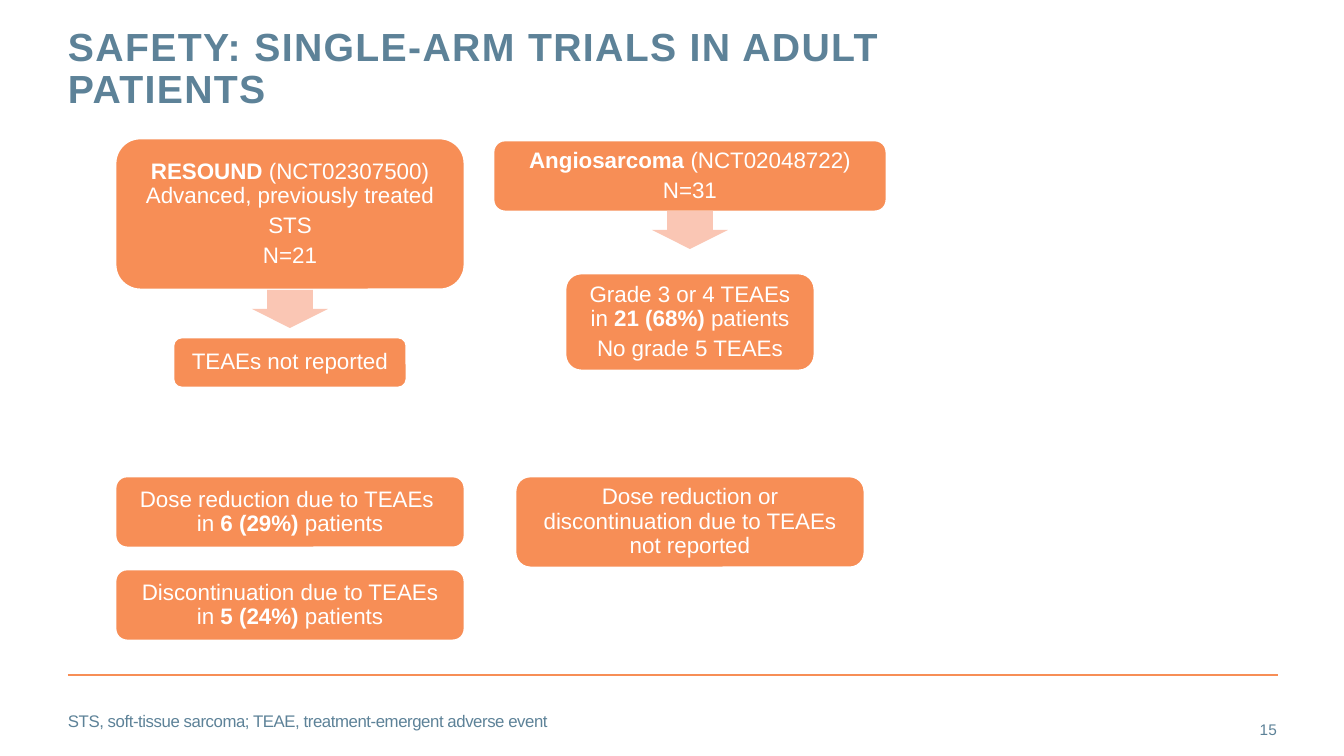
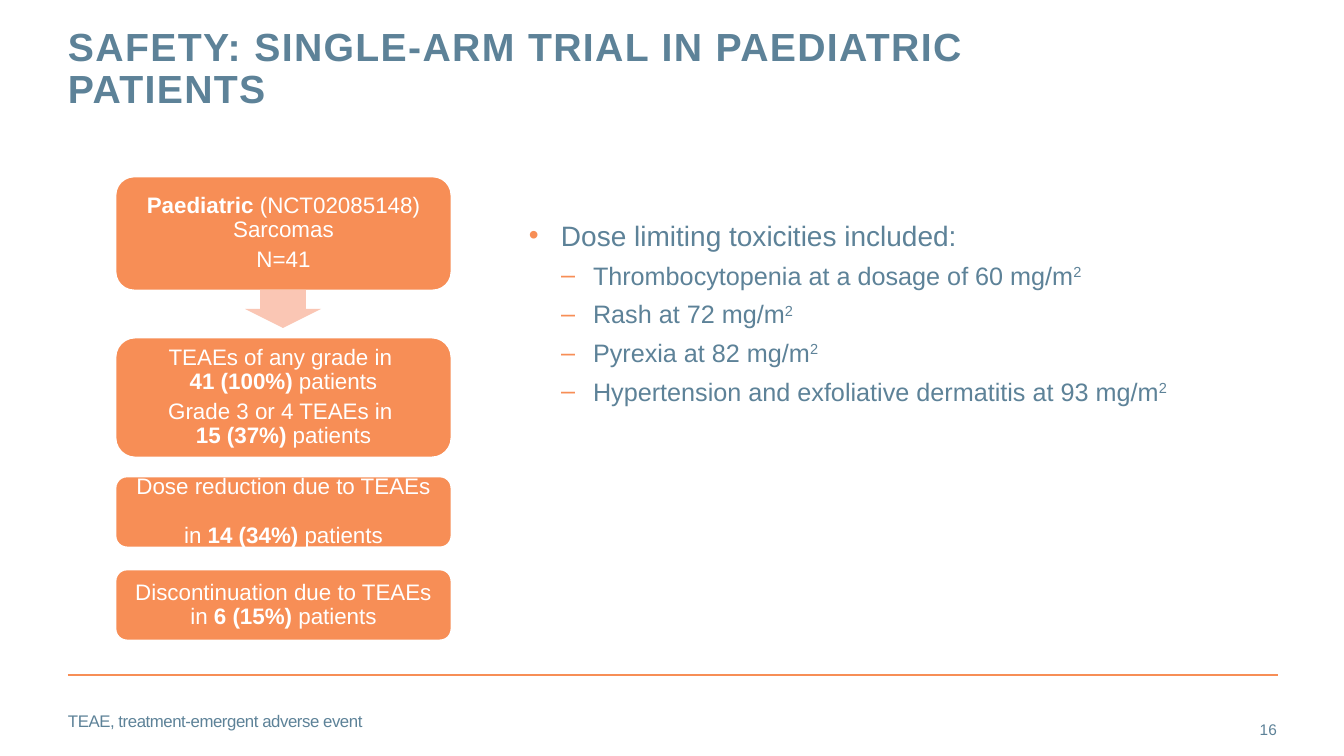
from copy import deepcopy

from lxml import etree
from pptx import Presentation
from pptx import util as u
from pptx.dml.color import RGBColor
from pptx.enum import shapes, text
from pptx.oxml.ns import qn

SCALE = 914400 / 100.8


def px(*nums):
    return [u.Emu(round(n * SCALE)) for n in nums]


def paint(hue):
    return RGBColor.from_string(hue)


class Deck:
    font = "Arial"
    slate, coral, blush, white = "5D8298", "F78E56", "FAC6B4", "FFFFFF"

    def __init__(self):
        self.prs = Presentation()
        self.prs.slide_width, self.prs.slide_height = px(1344, 756)
        self.slide = None

    def page(self, layout, title, note, num):
        self.slide = self.prs.slides.add_slide(self.prs.slide_layouts[layout])
        self.rule()
        head = self.slide.shapes.title
        para = self.frame(head, (68, 27, 964, 89)).paragraphs[0]
        para.alignment = text.PP_ALIGN.LEFT
        para.line_spacing = u.Pt(30)
        self.run(para, title, 28, self.slate, bold=True, track=100)
        self.label((68, 701, 1104, 40), note, 12, track=-30)
        self.label((1190, 709, 87, 40), num, 11, text.PP_ALIGN.RIGHT)

    def frame(self, shape, area, inset=0, anchor=text.MSO_ANCHOR.TOP):
        shape.left, shape.top, shape.width, shape.height = px(*area)
        body = shape.text_frame
        body.word_wrap = True
        body.auto_size = text.MSO_AUTO_SIZE.NONE
        body.vertical_anchor = anchor
        body.margin_left, body.margin_top, body.margin_right, body.margin_bottom = px(*[inset] * 4)
        return body

    def run(self, para, words, size, hue, bold=False, track=0, base=0):
        for i, line in enumerate(words.split("\n")):
            if i:
                para.add_line_break()
                para._p[-1].append(deepcopy(para.runs[-1]._r.rPr))
            if not line:
                continue
            run = para.add_run()
            run.text = line
            font = run.font
            font.name, font.size, font.bold = self.font, u.Pt(size), bold
            font.color.rgb = paint(hue)
            for key, val in (("spc", track), ("baseline", base)):
                if val:
                    run._r.get_or_add_rPr().set(key, str(val))

    def rule(self):
        line = self.slide.shapes.add_connector(shapes.MSO_CONNECTOR.STRAIGHT, *px(68, 675, 1278, 675))
        line.line.color.rgb = paint(self.coral)
        line.line.width = u.Pt(2)
        etree.SubElement(line._element.spPr, qn("a:effectLst"))

    def label(self, area, words, size, align=text.PP_ALIGN.LEFT, track=0):
        box = self.slide.shapes.add_textbox(*px(*area))
        para = self.frame(box, area, anchor=text.MSO_ANCHOR.MIDDLE).paragraphs[0]
        para.alignment = align
        self.run(para, words, size, self.slate, track=track)

    def shape(self, kind, area, fill):
        shape = self.slide.shapes.add_shape(kind, *px(*area))
        shape.shadow.inherit = False
        shape.fill.solid()
        shape.fill.fore_color.rgb = paint(fill)
        return shape

    def box(self, area, *paras):
        shape = self.shape(shapes.MSO_SHAPE.ROUNDED_RECTANGLE, area, self.coral)
        shape.line.color.rgb = paint(self.white)
        shape.line.width = u.Pt(2)
        body = self.frame(shape, area, 16, text.MSO_ANCHOR.MIDDLE)
        for i, words in enumerate(paras):
            para = body.add_paragraph() if i else body.paragraphs[0]
            para.alignment = text.PP_ALIGN.CENTER
            para.line_spacing = 0.9
            para.space_after = u.Pt(4)
            for j, part in enumerate(words.split("**")):
                self.run(para, part, 16, self.white, bold=j % 2 == 1)

    def arrow(self, mid, top):
        shape = self.shape(shapes.MSO_SHAPE.DOWN_ARROW, (mid - 38, top, 76, 38), self.blush)
        shape.line.fill.background()
        shape.adjustments[0], shape.adjustments[1] = 0.6, 0.5

    def list(self, area, items):
        body = self.frame(self.slide.placeholders[1], area)
        for i, (level, words) in enumerate(items):
            para = body.add_paragraph() if i else body.paragraphs[0]
            para.level = level
            prop = para._p.get_or_add_pPr()
            step = px(32)[0]
            prop.set("marL", str(step * (level + 1)))
            prop.set("indent", str(-step))
            tint = etree.SubElement(prop, qn("a:buClr"))
            etree.SubElement(tint, qn("a:srgbClr"), val=self.coral)
            etree.SubElement(prop, qn("a:buFont"), typeface=self.font)
            etree.SubElement(prop, qn("a:buChar"), char="•–"[level])
            para.space_before = u.Pt(6 if i else 0)
            for j, part in enumerate(words.split("^")):
                self.run(para, part, 18 if level else 20, self.slate, base=30000 * j)


def adult(deck):
    deck.page(5, "SAFETY: SINGLE-ARM TRIALS IN ADULT PATIENTS",
              "STS, soft-tissue sarcoma; TEAE, treatment-emergent adverse event", "15")
    deck.box((115, 138, 350, 152),
             "**RESOUND **(NCT02307500)\nAdvanced, previously treated", "STS", "N=21")
    deck.arrow(290, 290)
    deck.box((173, 337, 234, 51), "TEAEs not reported")
    deck.box((115, 476, 350, 72), "Dose reduction due to TEAEs \nin **6 (29%)** patients")
    deck.box((115, 569, 350, 72), "Discontinuation due to TEAEs in **5 (24%)** patients")
    deck.box((493, 140, 394, 72), "**Angiosarcoma **(NCT02048722)", "N=31")
    deck.arrow(690, 211)
    deck.box((515, 476, 350, 92), "Dose reduction or discontinuation due to TEAEs not reported")
    deck.box((565, 273, 250, 98), "Grade 3 or 4 TEAEs in **21 (68%)** patients", "No grade 5 TEAEs")


def child(deck):
    deck.page(1, "SAFETY: SINGLE-ARM TRIAL IN PAEDIATRIC PATIENTS",
              "TEAE, treatment-emergent adverse event", "16")
    deck.box((115, 176, 337, 115), "**Paediatric **(NCT02085148)\nSarcomas", "N=41")
    deck.arrow(283, 290)
    deck.box((115, 337, 337, 121), "TEAEs of any grade in \n**41 (100%)** patients",
             "Grade 3 or 4 TEAEs in \n**15 (37%)** patients")
    deck.box((115, 476, 337, 72), "Dose reduction due to TEAEs \nin **14 (34%)** patients")
    deck.box((115, 569, 337, 72), "Discontinuation due to TEAEs in **6 (15%)** patients")
    deck.list((529, 218, 674, 437), [
        (0, "Dose limiting toxicities included:"),
        (1, "Thrombocytopenia at a dosage of 60 mg/m^2"),
        (1, "Rash at 72 mg/m^2"),
        (1, "Pyrexia at 82 mg/m^2"),
        (1, "Hypertension and exfoliative dermatitis at 93 mg/m^2"),
    ])


def main():
    deck = Deck()
    adult(deck)
    child(deck)
    deck.prs.save("out.pptx")


if __name__ == "__main__":
    main()
